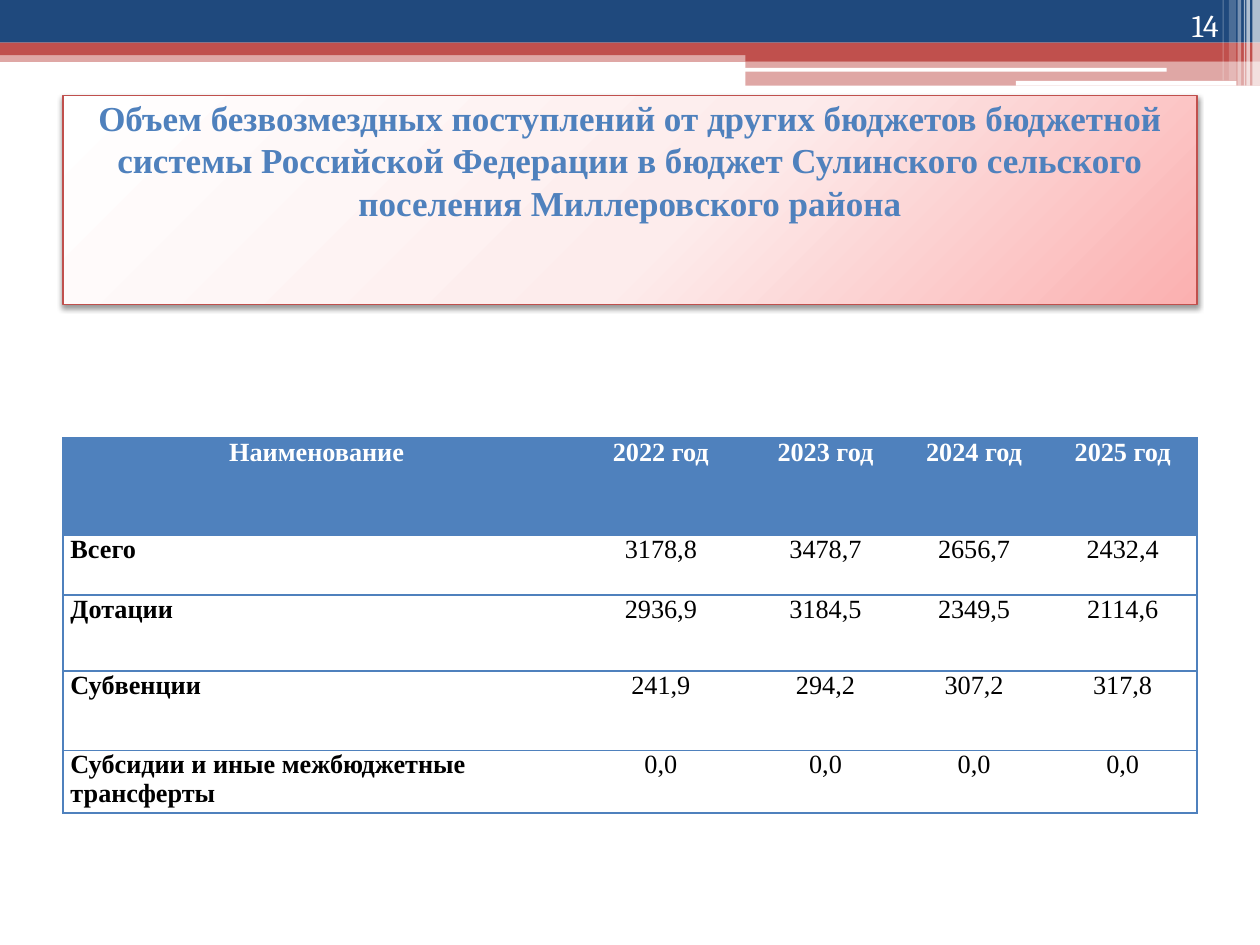
from lxml.etree import SubElement
from pptx import Presentation
from pptx.dml.color import RGBColor
from pptx.enum.shapes import MSO_SHAPE
from pptx.enum.text import MSO_ANCHOR, PP_ALIGN
from pptx.oxml import parse_xml
from pptx.oxml.ns import nsdecls, qn
from pptx.util import Pt

HUES = {"navy": "1F497D", "red": "C0504D", "blue": "4F81BD", "white": "FFFFFF",
        "black": "000000", "blush": "FDECEC", "pink": "FBB0B0"}


def hue(name):
    return RGBColor.from_string(HUES[name])


def write(frame, text, size, color, bold=False, align=PP_ALIGN.CENTER,
          face="Times New Roman"):
    """Fill the first paragraph of a frame with one formatted run."""
    para = frame.paragraphs[0]
    para.alignment = align
    run = para.add_run()
    run.text = text
    font = run.font
    font.name, font.size, font.bold = face, Pt(size), bold
    font.color.rgb = hue(color)
    return para


deck = Presentation()
deck.slide_width, deck.slide_height = Pt(720), Pt(540)
slide = deck.slides.add_slide(deck.slide_layouts[5])
shapes = slide.shapes

# Header bands: left, top, width, height, colour, opacity in percent
bands = [
    (0, 28.8, 720, 6.6, "red", 50),
    (0, 0, 720, 24.4, "navy", 100),
    (0, 24.4, 720, 7.2, "red", 100),
    (426, 28, 294, 7, "red", 100),
    (426, 35, 294, 14, "red", 50),
    (425.5, 38.8, 241.2, 2.2, "white", 100),
    (580.5, 46.2, 126, 2.8, "white", 100),
]
# Light stripes at the right edge: left, width, height, opacity
stripes = [(715.6, 4.4, 49, 65), (712.2, 2, 49, 65), (710.8, 0.7, 49, 60),
           (707.2, 2, 49, 40), (702.2, 4.1, 46, 20), (698.6, 0.7, 46, 30)]
bands += [(left, 0, wide, high, "white", clear) for left, wide, high, clear in stripes]

for left, top, wide, high, color, clear in bands:
    band = shapes.add_shape(MSO_SHAPE.RECTANGLE, Pt(left), Pt(top), Pt(wide), Pt(high))
    band.shadow.inherit = False
    band.line.fill.background()
    band.fill.solid()
    band.fill.fore_color.rgb = hue(color)
    if clear < 100:
        tint = band._element.spPr.find(".//" + qn("a:srgbClr"))
        SubElement(tint, qn("a:alpha"), val=str(clear * 1000))

# Title panel with gradient and shadow
title = shapes.title
title.left, title.top, title.width, title.height = Pt(36), Pt(54.6), Pt(648), Pt(119.4)
stops = "".join(
    f'<a:gs pos="{pos}000"><a:srgbClr val="{HUES[name]}"/></a:gs>'
    for pos, name in [(0, "white"), (55, "blush"), (100, "pink")])
props = title._element.spPr
props.append(parse_xml(
    f'<a:gradFill {nsdecls("a")} rotWithShape="1"><a:gsLst>{stops}</a:gsLst>'
    '<a:lin ang="2700000" scaled="0"/></a:gradFill>'))
title.line.color.rgb = hue("red")
title.line.width = Pt(0.75)
props.append(parse_xml(
    f'<a:effectLst {nsdecls("a")}><a:outerShdw blurRad="40000" dist="23000" '
    'dir="5400000" rotWithShape="0"><a:srgbClr val="000000">'
    '<a:alpha val="40000"/></a:srgbClr></a:outerShdw></a:effectLst>'))
frame = title.text_frame
frame.word_wrap = True
frame.vertical_anchor = MSO_ANCHOR.TOP
frame.margin_top = 0
head = write(frame, "Объем безвозмездных поступлений от других бюджетов бюджетной "
             "системы Российской Федерации в бюджет Сулинского сельского "
             "поселения Миллеровского района", 20, "blue", True)
head.line_spacing = Pt(24.3)

# Table of receipts by year
rows = [
    ["Наименование", "2022 год", "2023 год", "2024 год", "2025 год"],
    ["Всего", "3178,8", "3478,7", "2656,7", "2432,4"],
    ["Дотации", "2936,9", "3184,5", "2349,5", "2114,6"],
    ["Субвенции", "241,9", "294,2", "307,2", "317,8"],
    ["Субсидии и иные межбюджетные трансферты", "0,0", "0,0", "0,0", "0,0"],
]
widths = [290, 103.3, 84.9, 84.9, 84.9]
heights = [55.7, 34.2, 43.5, 45.4, 35.7]
last = len(widths) - 1
grid = shapes.add_table(len(rows), len(widths), Pt(36), Pt(250.2),
                        Pt(648), Pt(sum(heights))).table
for col, wide in zip(grid.columns, widths):
    col.width = Pt(wide)
for row, high in zip(grid.rows, heights):
    row.height = Pt(high)

for i, row in enumerate(rows):
    for j, text in enumerate(row):
        cell = grid.cell(i, j)
        cell.margin_left = cell.margin_right = Pt(4.3)
        cell.margin_top = cell.margin_bottom = 0
        write(cell.text_frame, text, 15, "black" if i else "white",
              bold=i == 0 or j == 0,
              align=PP_ALIGN.LEFT if i and j == 0 else PP_ALIGN.CENTER)
        edges = {"L": j == 0, "R": j == last, "T": True, "B": True}
        for side, shown in edges.items():
            edge = SubElement(cell._tc.get_or_add_tcPr(), qn(f"a:ln{side}"), w="12700")
            if shown:
                paint = SubElement(edge, qn("a:solidFill"))
                SubElement(paint, qn("a:srgbClr"), val=HUES["blue"])
            else:
                SubElement(edge, qn("a:noFill"))
        if i:
            cell.fill.background()
        else:
            cell.fill.solid()
            cell.fill.fore_color.rgb = hue("blue")

# Page number
page = shapes.add_textbox(Pt(643.7), Pt(0), Pt(59.8), Pt(28.8)).text_frame
page.word_wrap = True
page.vertical_anchor = MSO_ANCHOR.BOTTOM
write(page, "14", 18, "white", align=PP_ALIGN.RIGHT, face="Cambria")

deck.save("out.pptx")
